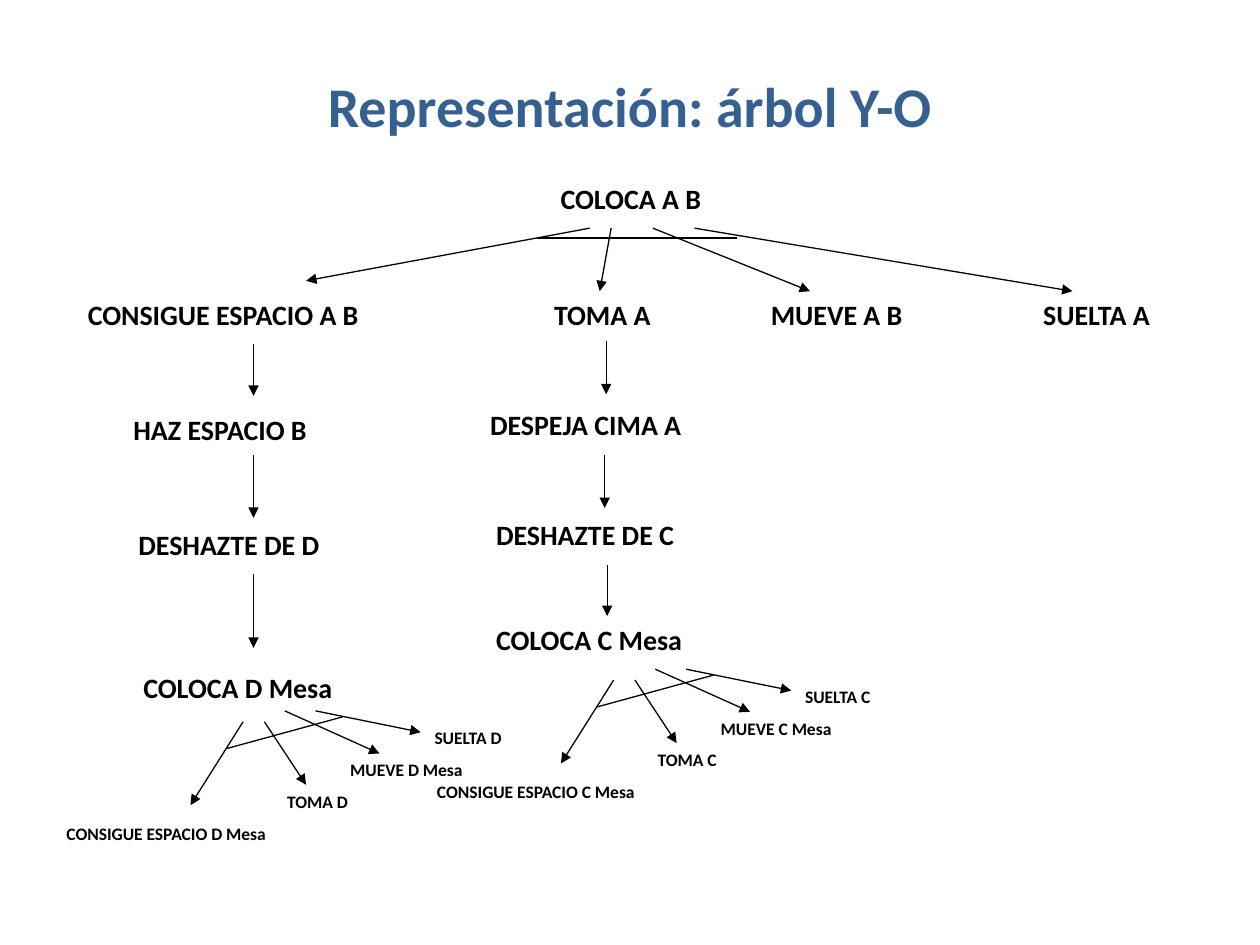
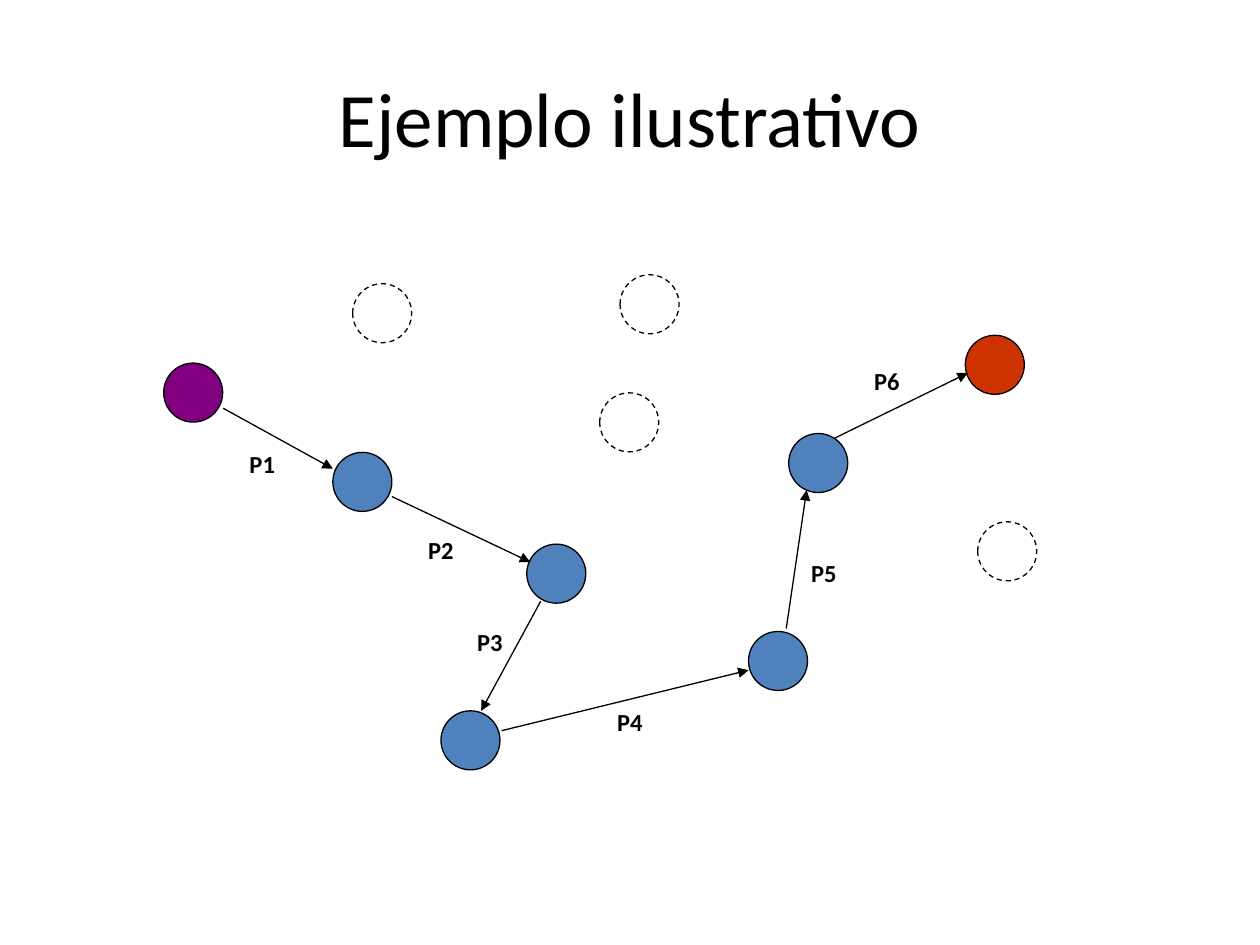
from lxml.etree import SubElement
from pptx import Presentation
from pptx.dml.color import RGBColor
from pptx.enum.dml import MSO_LINE_DASH_STYLE as Dash
from pptx.enum.shapes import MSO_CONNECTOR as Link, MSO_SHAPE as Shape
from pptx.enum.text import MSO_ANCHOR as Anchor, MSO_AUTO_SIZE as Fit, PP_ALIGN as Align
from pptx.oxml.ns import qn
from pptx.util import Cm, Pt

# All positions and lengths are in centimetres.
COLORS = {
    "ink": "000000",
    "heading": "376092",
    "start": "800080",
    "step": "4F81BD",
    "goal": "CC3300",
}
FORMATS = {
    "tree_title": {"name": "Calibri", "size": Pt(32), "bold": True},
    "path_title": {"name": "Calibri", "size": Pt(44), "bold": False},
    "task": {"name": "Calibri", "size": Pt(16), "bold": True},
    "subtask": {"name": "Calibri", "size": Pt(10), "bold": True},
    "step": {"name": "Calibri", "size": Pt(14), "bold": True},
}
LABEL_HEIGHTS = {"task": 0.94, "subtask": 0.69, "step": 0.84}

# Tree: text, left, top, width
TASKS = [
    ("COLOCA A B", 11.05, 3.53, 4.09),
    ("CONSIGUE ESPACIO A B", 1.52, 5.87, 7.34),
    ("TOMA A", 10.92, 5.87, 2.74),
    ("MUEVE A B", 15.29, 5.87, 3.63),
    ("SUELTA A", 20.78, 5.87, 3.33),
    ("HAZ ESPACIO B", 2.44, 8.2, 4.93),
    ("DESHAZTE DE D", 2.54, 10.52, 5.05),
    ("COLOCA D Mesa", 2.64, 13.39, 5.08),
    ("DESPEJA CIMA A", 9.63, 8.1, 5.31),
    ("DESHAZTE DE C", 9.75, 10.31, 5.05),
    ("COLOCA C Mesa", 9.75, 12.42, 5.08),
]
ROOT_TOP = 4.6
ROOT_BRANCHES = [  # start x, end point
    (11.89, (6.17, 5.66)),
    (12.32, (12.09, 5.87)),
    (13.16, (16.33, 5.87)),
    (14.0, (21.62, 5.87)),
]
ROOT_AND_LINE = ((10.82, 4.8), (14.86, 4.8))
CHAIN_ARROWS = [  # x, start y, end y
    (5.11, 6.93, 7.98),
    (5.11, 9.17, 10.44),
    (5.11, 11.58, 13.06),
    (12.22, 6.88, 7.95),
    (12.19, 9.17, 10.24),
    (12.24, 11.38, 12.42),
]

# The same fan of subtasks hangs under each block, shifted as a whole
FAN_SHIFTS = {"D": (0, 0), "C": (7.47, -0.84)}
FAN_BOTTOM, FAN_STEP = 16.46, 0.64
FAN = [  # text, left, width, arrow start, arrow end
    ("CONSIGUE ESPACIO {} Mesa", 1.09, 5.38, (4.9, 14.55), (3.84, 16.23)),
    ("TOMA {}", 5.54, 1.9, (5.33, 14.55), (6.17, 15.82)),
    ("MUEVE {} Mesa", 6.81, 3.1, (5.74, 14.33), (7.65, 15.19)),
    ("SUELTA {}", 8.51, 2.29, (6.36, 14.33), (8.48, 14.76)),
]
FAN_AND_LINE = ((4.57, 15.09), (6.91, 14.45))

# Path: circles and the steps that join them
DIAMETER = 1.19
STEP_WIDTH = 1.12
VISITED = [
    ("start", 3.3, 7.32),
    ("step", 6.71, 9.12),
    ("step", 10.62, 10.97),
    ("step", 8.89, 14.33),
    ("step", 15.09, 12.73),
    ("step", 15.9, 8.74),
    ("goal", 19.46, 6.76),
]
UNVISITED = [(19.71, 10.52), (12.09, 7.92), (12.5, 5.54), (7.11, 5.72)]
STEPS = [  # label left and top, arrow start, arrow end
    (4.78, 8.92, (4.5, 8.23), (6.71, 9.45)),
    (8.38, 10.67, (7.9, 10.01), (10.69, 11.33)),
    (9.37, 12.52, (10.9, 12.12), (9.7, 14.33)),
    (12.19, 14.12, (10.11, 14.73), (15.09, 13.51)),
    (16.1, 11.13, (15.85, 12.67), (16.26, 9.88)),
    (17.37, 7.26, (16.81, 8.84), (19.51, 7.52)),
]


def rgb(color):
    return RGBColor.from_string(COLORS[color])


def write(frame, text, style, color="ink"):
    paragraph = frame.paragraphs[0]
    run = paragraph.add_run()
    run.text = text
    for attribute, value in FORMATS[style].items():
        setattr(run.font, attribute, value)
    run.font.color.rgb = rgb(color)
    return paragraph


def add_titled_slide(deck, text, top, style, color):
    slide = deck.slides.add_slide(deck.slide_layouts[5])
    title = slide.shapes.title
    title.left, title.top, title.width, title.height = map(Cm, (1.27, top, 22.86, 3.18))
    title.text_frame.vertical_anchor = Anchor.MIDDLE
    write(title.text_frame, text, style, color).alignment = Align.CENTER
    return slide


def add_label(slide, text, left, top, width, style):
    box = slide.shapes.add_textbox(*map(Cm, (left, top, width, LABEL_HEIGHTS[style])))
    box.text_frame.word_wrap = False
    box.text_frame.auto_size = Fit.SHAPE_TO_FIT_TEXT
    write(box.text_frame, text, style)


def outline(shape):
    shape.line.color.rgb = rgb("ink")
    shape.line.width = Pt(0.75)


def add_line(slide, start, end, arrow=True):
    line = slide.shapes.add_connector(Link.STRAIGHT, *map(Cm, (*start, *end)))
    outline(line)
    if arrow:
        SubElement(line.line._get_or_add_ln(), qn("a:tailEnd"), type="triangle")
    SubElement(line._element.spPr, qn("a:effectLst"))


def add_circle(slide, left, top, color=None):
    """Draw a filled circle, or a dashed empty one when no colour is given."""
    circle = slide.shapes.add_shape(Shape.OVAL, *map(Cm, (left, top, DIAMETER, DIAMETER)))
    circle.shadow.inherit = False
    outline(circle)
    if color:
        circle.fill.solid()
        circle.fill.fore_color.rgb = rgb(color)
    else:
        circle.fill.background()
        circle.line.dash_style = Dash.DASH


def add_fan(slide, block, shift):
    def shifted(point):
        return point[0] + shift[0], point[1] + shift[1]

    for row, (text, left, width, start, end) in enumerate(FAN):
        corner = shifted((left, FAN_BOTTOM - row * FAN_STEP))
        add_label(slide, text.format(block), *corner, width, "subtask")
        add_line(slide, shifted(start), shifted(end))
    add_line(slide, *map(shifted, FAN_AND_LINE), arrow=False)


def build_tree(deck):
    slide = add_titled_slide(deck, "Representación: árbol Y-O", 0.53, "tree_title", "heading")
    for task in TASKS:
        add_label(slide, *task, "task")
    for x, end in ROOT_BRANCHES:
        add_line(slide, (x, ROOT_TOP), end)
    add_line(slide, *ROOT_AND_LINE, arrow=False)
    for x, top, bottom in CHAIN_ARROWS:
        add_line(slide, (x, top), (x, bottom))
    for block, shift in FAN_SHIFTS.items():
        add_fan(slide, block, shift)


def build_path(deck):
    slide = add_titled_slide(deck, "Ejemplo ilustrativo", 0.76, "path_title", "ink")
    for color, left, top in VISITED:
        add_circle(slide, left, top, color)
    for left, top in UNVISITED:
        add_circle(slide, left, top)
    for number, (left, top, start, end) in enumerate(STEPS, 1):
        add_line(slide, start, end)
        add_label(slide, f"P{number}", left, top, STEP_WIDTH, "step")


def main():
    deck = Presentation()
    deck.slide_width, deck.slide_height = Cm(25.4), Cm(19.05)
    build_tree(deck)
    build_path(deck)
    deck.save("out.pptx")


if __name__ == "__main__":
    main()
